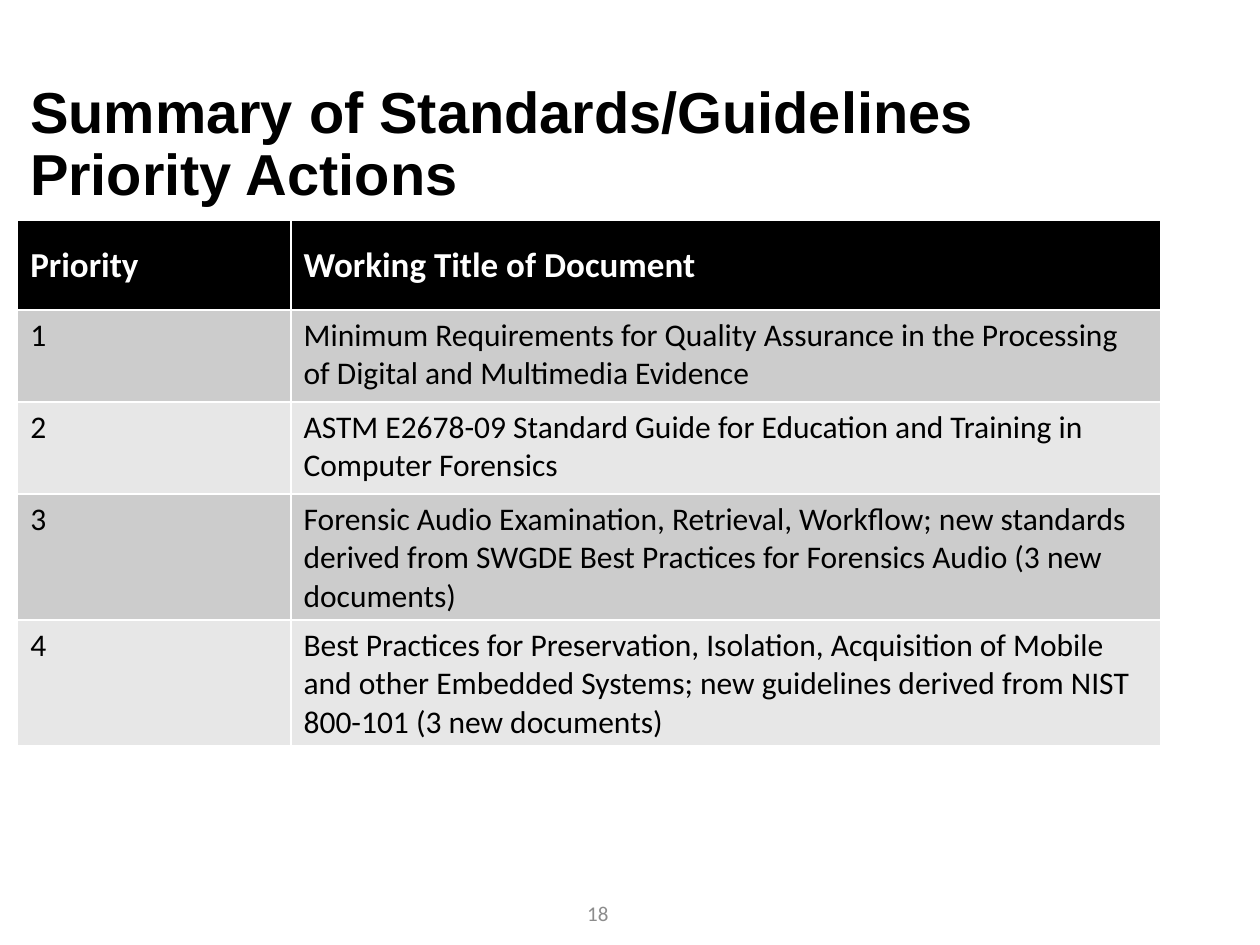
from pptx import Presentation
from pptx.dml.color import RGBColor
from pptx.enum.text import MSO_ANCHOR, PP_ALIGN
from pptx.util import Inches, Pt


def tint(code):
    return RGBColor.from_string(code)


def write(frame, text, size, color="000000", font="Calibri", bold=False,
          align=PP_ALIGN.LEFT, anchor=MSO_ANCHOR.MIDDLE, space=1.0):
    frame.word_wrap = True
    frame.vertical_anchor = anchor
    para = frame.paragraphs[0]
    para.alignment = align
    para.line_spacing = space
    run = para.add_run()
    run.text = text
    run.font.size = Pt(size)
    run.font.name = font
    run.font.bold = bold
    run.font.color.rgb = tint(color)


deck = Presentation()
deck.slide_width = Inches(10)
deck.slide_height = Inches(7.5)
slide = deck.slides.add_slide(deck.slide_layouts[6])

title = slide.shapes.add_textbox(Inches(0.14), Inches(0.43), Inches(8.62), Inches(1.45))
write(title.text_frame, "Summary of Standards/Guidelines Priority Actions", 33,
      font="Arial", bold=True, space=0.9)

heads = ["Priority", "Working Title of Document"]
works = [
    "Minimum Requirements for Quality Assurance in the Processing of Digital and Multimedia Evidence",
    "ASTM E2678-09 Standard Guide for Education and Training in Computer Forensics",
    "Forensic Audio Examination, Retrieval, Workflow; new standards derived from "
    "SWGDE Best Practices for Forensics Audio (3 new documents)",
    "Best Practices for Preservation, Isolation, Acquisition of Mobile and other Embedded Systems; "
    "new guidelines derived from NIST 800-101 (3 new documents)",
]
rows = [heads] + [[str(rank), work] for rank, work in enumerate(works, 1)]

table = slide.shapes.add_table(len(rows), 2, Inches(0.14), Inches(1.75),
                               Inches(9.07), Inches(3.63)).table
table.columns[0].width = Inches(2.17)
table.columns[1].width = Inches(6.9)

for r, row in enumerate(rows):
    head = r == 0
    table.rows[r].height = Inches(0.71 if head else 0.73)
    fill = "000000" if head else "CCCCCC" if r % 2 else "E7E7E7"
    for c, text in enumerate(row):
        cell = table.cell(r, c)
        cell.fill.solid()
        cell.fill.fore_color.rgb = tint(fill)
        anchor = MSO_ANCHOR.MIDDLE if head else MSO_ANCHOR.TOP
        cell.vertical_anchor = anchor
        write(cell.text_frame, text, 20 if head else 18,
              color="FFFFFF" if head else "000000", bold=head, anchor=anchor)

page = slide.shapes.add_textbox(Inches(3.62), Inches(7.05), Inches(2.25), Inches(0.4))
write(page.text_frame, "18", 12, color="8C8C8C", align=PP_ALIGN.CENTER)

deck.save("out.pptx")
